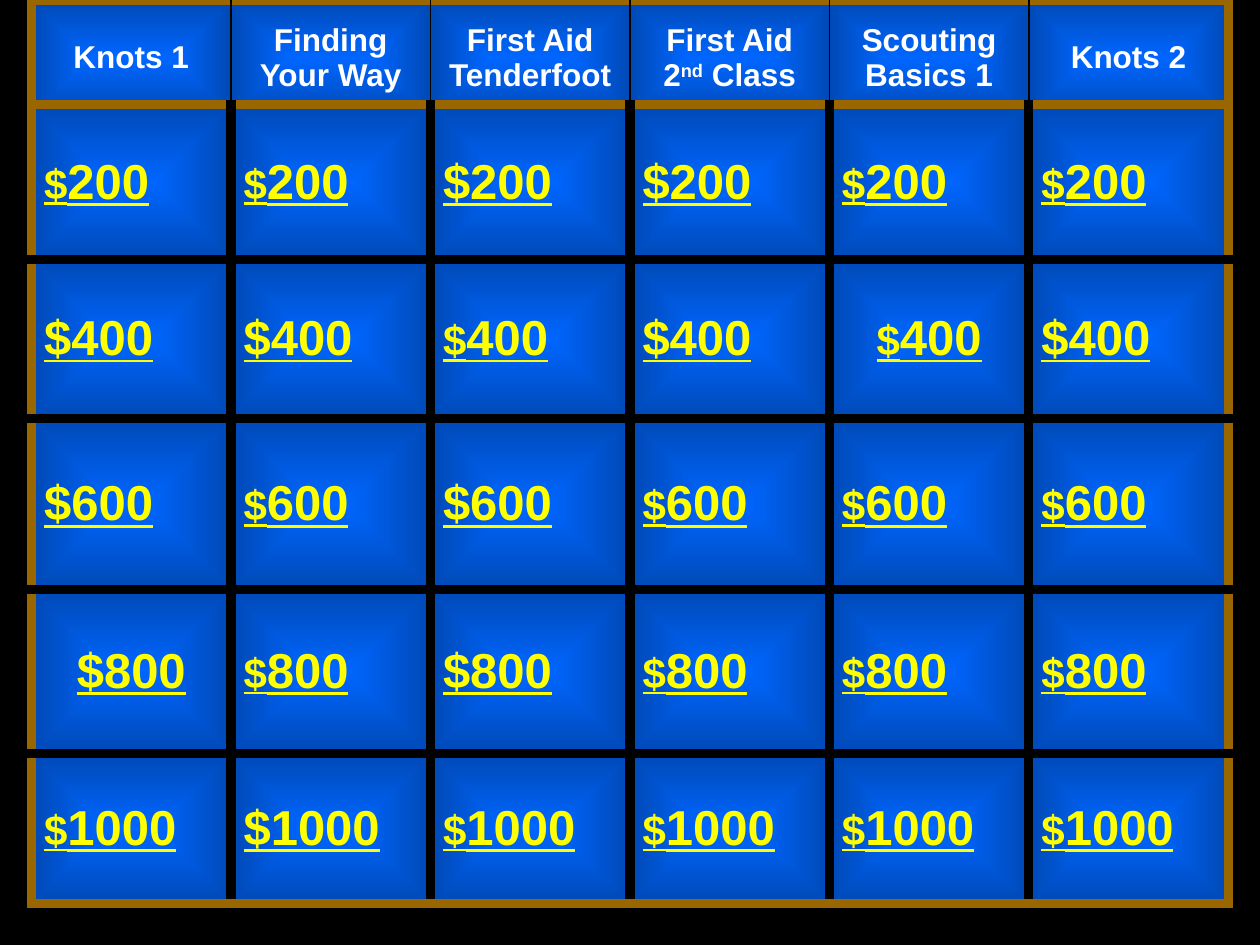
from dataclasses import dataclass

from lxml import etree
from pptx import Presentation
from pptx.dml.color import RGBColor
from pptx.enum.text import MSO_ANCHOR, PP_ALIGN
from pptx.oxml import parse_xml
from pptx.oxml.ns import nsdecls, qn
from pptx.util import Inches, Pt

CENTER, LEFT = PP_ALIGN.CENTER, PP_ALIGN.LEFT
MIDDLE = MSO_ANCHOR.MIDDLE

SLIDE_WIDTH, SLIDE_HEIGHT = Inches(10), Inches(7.5)
BOARD_LEFT = round(SLIDE_WIDTH * 0.025)
BOARD_WIDTH = round(SLIDE_WIDTH * 0.95)
FONT = "Arial"
UNSTYLED_TABLE = "{2D5ABB26-0587-4C30-8999-92F81FD0307C}"
COLORS = {
    "background": "000000",
    "gap": "000000",
    "frame": "996600",
    "glow": "0066FF",
    "edge": "0049B6",
    "category": "FFFFFF",
    "prize": "FFFF00",
}


@dataclass(frozen=True)
class Piece:
    text: str
    size: int
    raised: bool = False


@dataclass(frozen=True)
class Tile:
    pieces: tuple[Piece, ...]
    color: str
    centered: bool = False
    underlined: bool = False


@dataclass(frozen=True)
class Border:
    color: str
    points: int


@dataclass(frozen=True)
class PrizeRow:
    amount: int
    height: float
    large_dollar_columns: tuple[int, ...]
    centered_columns: tuple[int, ...] = ()


FRAME = Border("frame", 6)
GAP = Border("gap", 6)
HAIRLINE = Border("gap", 1)

CATEGORIES = (
    ("Knots 1",),
    ("Finding Your Way",),
    ("First Aid Tenderfoot",),
    ("First Aid 2", "nd", " Class"),
    ("Scouting Basics 1",),
    ("Knots 2",),
)
PRIZE_ROWS = (
    PrizeRow(200, 1.23, (2, 3)),
    PrizeRow(400, 1.26, (0, 1, 3, 5), (4,)),
    PrizeRow(600, 1.36, (0, 2)),
    PrizeRow(800, 1.30, (0, 2), (0,)),
    PrizeRow(1000, 1.19, (1,)),
)


def category_tile(parts: tuple[str, ...]) -> Tile:
    pieces = tuple(Piece(part, 18, index == 1) for index, part in enumerate(parts))
    return Tile(pieces, "category", centered=True)


def prize_tile(row: PrizeRow, column: int) -> Tile:
    if column in row.large_dollar_columns:
        pieces = (Piece(f"${row.amount}", 28),)
    else:
        pieces = (Piece("$", 24), Piece(str(row.amount), 28))
    return Tile(pieces, "prize", column in row.centered_columns, underlined=True)


def add_border(cell, side: str, border: Border) -> None:
    line = etree.SubElement(
        cell._tc.get_or_add_tcPr(), qn(f"a:ln{side}"), w=str(Pt(border.points))
    )
    fill = etree.SubElement(line, qn("a:solidFill"))
    etree.SubElement(fill, qn("a:srgbClr"), val=COLORS[border.color])


def add_glow(cell) -> None:
    cell._tc.get_or_add_tcPr().append(parse_xml(
        f'<a:gradFill {nsdecls("a")} rotWithShape="1"><a:gsLst>'
        f'<a:gs pos="0"><a:srgbClr val="{COLORS["glow"]}"/></a:gs>'
        f'<a:gs pos="100000"><a:srgbClr val="{COLORS["edge"]}"/></a:gs>'
        '</a:gsLst><a:path path="shape">'
        '<a:fillToRect l="50000" t="50000" r="50000" b="50000"/>'
        '</a:path></a:gradFill>'
    ))


def write_tile(cell, tile: Tile) -> None:
    cell.vertical_anchor = MIDDLE
    paragraph = cell.text_frame.paragraphs[0]
    paragraph.alignment = CENTER if tile.centered else LEFT
    for piece in tile.pieces:
        run = paragraph.add_run()
        run.text = piece.text
        run.font.name = FONT
        run.font.size = Pt(piece.size)
        run.font.bold = True
        run.font.underline = tile.underlined
        run.font.color.rgb = RGBColor.from_string(COLORS[tile.color])
        if piece.raised:
            run._r.get_or_add_rPr().set("baseline", "30000")


def add_board(slide, top: float, heights: list[float], tiles: list[list[Tile]],
              divider: Border, row_border: Border | None, base: Border | None) -> None:
    column_count = len(tiles[0])
    table = slide.shapes.add_table(
        len(tiles), column_count, BOARD_LEFT, Inches(top), BOARD_WIDTH, Inches(sum(heights))
    ).table
    table.first_row = False
    table.horz_banding = False
    table._tbl.tblPr.find(qn("a:tableStyleId")).text = UNSTYLED_TABLE
    last_row, last_column = len(tiles) - 1, column_count - 1
    for row, (height, row_tiles) in enumerate(zip(heights, tiles)):
        table.rows[row].height = Inches(height)
        for column, tile in enumerate(row_tiles):
            cell = table.cell(row, column)
            write_tile(cell, tile)
            sides = {
                "L": FRAME if column == 0 else divider,
                "R": FRAME if column == last_column else divider,
                "T": FRAME if row == 0 else row_border,
                "B": base if row == last_row else row_border,
            }
            for side, border in sides.items():
                if border:
                    add_border(cell, side, border)
            add_glow(cell)


def main() -> None:
    presentation = Presentation()
    presentation.slide_width, presentation.slide_height = SLIDE_WIDTH, SLIDE_HEIGHT
    slide = presentation.slides.add_slide(presentation.slide_layouts[6])
    background = slide.background.fill
    background.solid()
    background.fore_color.rgb = RGBColor.from_string(COLORS["background"])

    categories = [[category_tile(parts) for parts in CATEGORIES]]
    add_board(slide, 0, [0.92], categories, HAIRLINE, None, None)

    prizes = [[prize_tile(row, column) for column in range(len(CATEGORIES))]
              for row in PRIZE_ROWS]
    heights = [row.height for row in PRIZE_ROWS]
    add_board(slide, 0.83, heights, prizes, GAP, GAP, FRAME)

    presentation.save("out.pptx")


if __name__ == "__main__":
    main()
